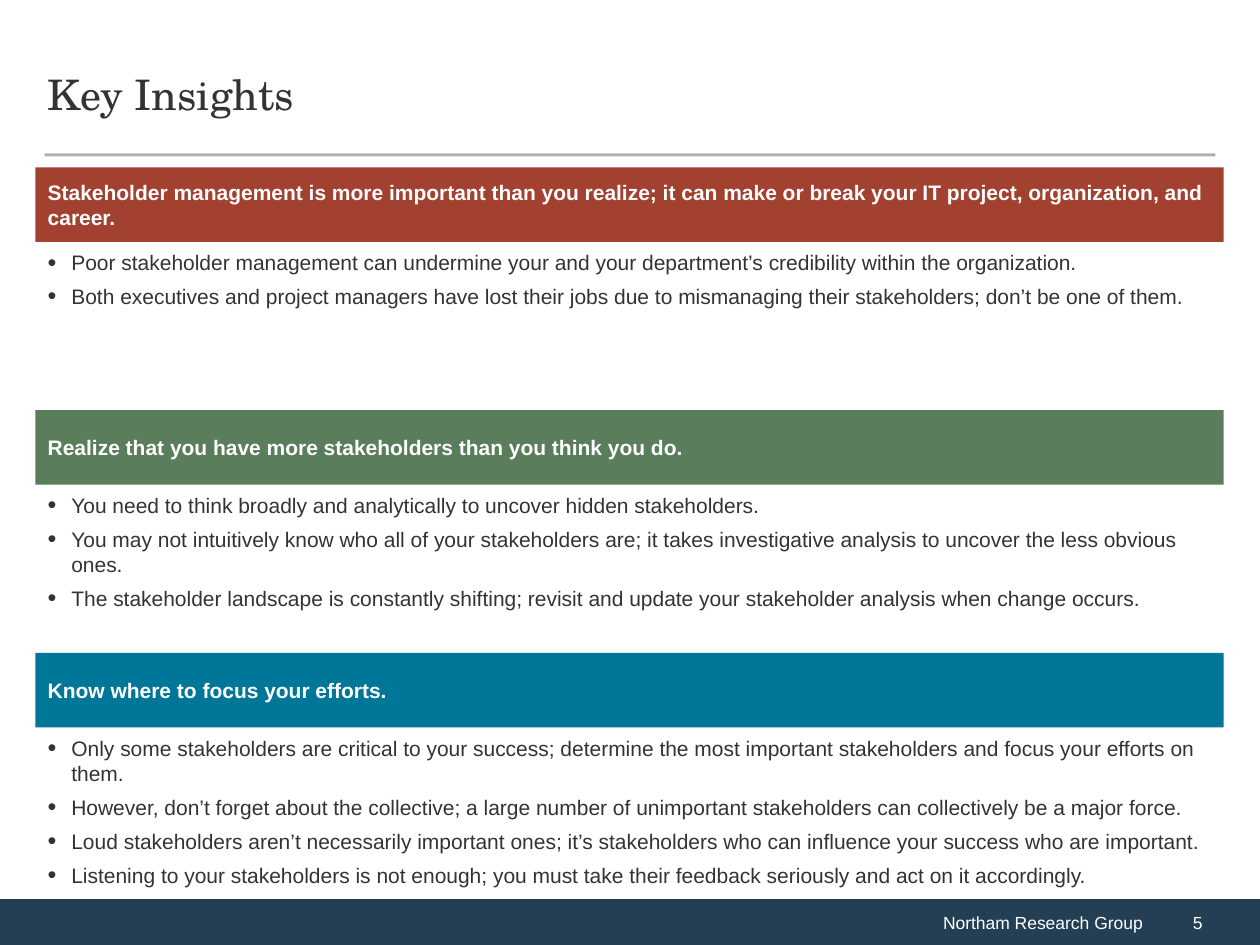
from lxml.etree import SubElement
from pptx import Presentation
from pptx.dml.color import RGBColor
from pptx.enum.shapes import MSO_CONNECTOR as Connector, MSO_SHAPE as Shape
from pptx.enum.text import MSO_ANCHOR as Anchor, PP_ALIGN as Align
from pptx.oxml.ns import qn
from pptx.util import Pt

TITLE = "Key Insights"
FOOTER = "Northam Research Group"
PAGE_NUMBER = "5"
DARK, WHITE, NAVY, RULE = "333333", "FFFFFF", "243F54", "45433E"

# Heading, band colour, bullet points
INSIGHTS = [
    ("Stakeholder management is more important than you realize; it can make or break "
     "your IT project, organization, and career.", "A24130", [
         "Poor stakeholder management can undermine your and your department’s credibility "
         "within the organization.",
         "Both executives and project managers have lost their jobs due to mismanaging their "
         "stakeholders; don’t be one of them.",
     ]),
    ("Realize that you have more stakeholders than you think you do.", "5A7D5C", [
        "You need to think broadly and analytically to uncover hidden stakeholders.",
        "You may not intuitively know who all of your stakeholders are; it takes investigative "
        "analysis to uncover the less obvious ones.",
        "The stakeholder landscape is constantly shifting; revisit and update your stakeholder "
        "analysis when change occurs.",
    ]),
    ("Know where to focus your efforts.", "007698", [
        "Only some stakeholders are critical to your success; determine the most important "
        "stakeholders and focus your efforts on them.",
        "However, don’t forget about the collective; a large number of unimportant stakeholders "
        "can collectively be a major force.",
        "Loud stakeholders aren’t necessarily important ones; it’s stakeholders who can influence "
        "your success who are important.",
        "Listening to your stakeholders is not enough; you must take their feedback seriously "
        "and act on it accordingly.",
    ]),
]

WIDTH, HEIGHT = 720, 540
LEFT, CONTENT_WIDTH = 20.2, 679
FIRST_BAND, BAND_PITCH, BAND_HEIGHT = 95.7, 138.7, 42.6
BODY_OFFSET = 43.5
BODY_HEIGHTS = (42, 76, 95)
FOOTER_TOP, NUMBER_LEFT = 513.8, 660

presentation = Presentation()
presentation.slide_width, presentation.slide_height = Pt(WIDTH), Pt(HEIGHT)
slide = presentation.slides.add_slide(presentation.slide_layouts[6])


def color(value):
    return RGBColor.from_string(value)


def add_bullet(paragraph):
    properties = paragraph._p.get_or_add_pPr()
    properties.set("marL", str(Pt(13.5)))
    properties.set("indent", str(-Pt(13.5)))
    bullet_color = SubElement(properties, qn("a:buClr"))
    SubElement(bullet_color, qn("a:srgbClr"), val=DARK)
    SubElement(properties, qn("a:buSzPct"), val="120000")
    SubElement(properties, qn("a:buFont"), typeface="Arial")
    SubElement(properties, qn("a:buChar"), char="•")


def add_text(texts, left, top, width, height, fill=None, size=12, font="Arial",
             text_color=DARK, bold=False, align=Align.LEFT, anchor=Anchor.MIDDLE,
             indent=0, before=0, spacing=None, bullets=False):
    box = Pt(left), Pt(top), Pt(width), Pt(height)
    if fill:
        shape = slide.shapes.add_shape(Shape.RECTANGLE, *box)
        shape.shadow.inherit = False
        shape.fill.solid()
        shape.fill.fore_color.rgb = color(fill)
        shape.line.fill.background()
    else:
        shape = slide.shapes.add_textbox(*box)
    frame = shape.text_frame
    frame.word_wrap = True
    frame.vertical_anchor = anchor
    frame.margin_left = Pt(7.2 + indent)
    for number, text in enumerate(texts):
        paragraph = frame.paragraphs[0] if number == 0 else frame.add_paragraph()
        paragraph.alignment = align
        paragraph.space_before = Pt(before)
        if spacing:
            paragraph.line_spacing = Pt(spacing)
        if bullets:
            add_bullet(paragraph)
        run = paragraph.add_run()
        run.text = text
        run.font.size, run.font.name, run.font.bold = Pt(size), font, bold
        run.font.color.rgb = color(text_color)


# Footer
footer_format = dict(fill=NAVY, size=10, text_color=WHITE)
footer_height = HEIGHT - FOOTER_TOP
add_text([FOOTER], 0, FOOTER_TOP, NUMBER_LEFT, footer_height, align=Align.RIGHT, **footer_format)
add_text([PAGE_NUMBER], NUMBER_LEFT, FOOTER_TOP, WIDTH - NUMBER_LEFT, footer_height,
         indent=14.4, **footer_format)

# Title and the translucent rule below it
add_text([TITLE], LEFT, 21, CONTENT_WIDTH, 67.5, size=24, font="TeX Gyre Schola", spacing=26)
rule = slide.shapes.add_connector(Connector.STRAIGHT, Pt(25.5), Pt(88.5), Pt(694.5), Pt(88.5))
rule.line.width = Pt(1.75)
rule.line.color.rgb = color(RULE)
rule_properties = rule._element.spPr
SubElement(rule_properties.find(".//" + qn("a:srgbClr")), qn("a:alpha"), val="42000")
SubElement(rule_properties, qn("a:effectLst"))

# Insights: a coloured band with bullets below
for index, (heading, band_color, points) in enumerate(INSIGHTS):
    top = FIRST_BAND + index * BAND_PITCH
    add_text([heading], LEFT, top, CONTENT_WIDTH, BAND_HEIGHT, fill=band_color,
             text_color=WHITE, bold=True)
    add_text(points, LEFT, top + BODY_OFFSET, CONTENT_WIDTH, BODY_HEIGHTS[index],
             anchor=Anchor.TOP, before=5, bullets=True)

presentation.save("out.pptx")
